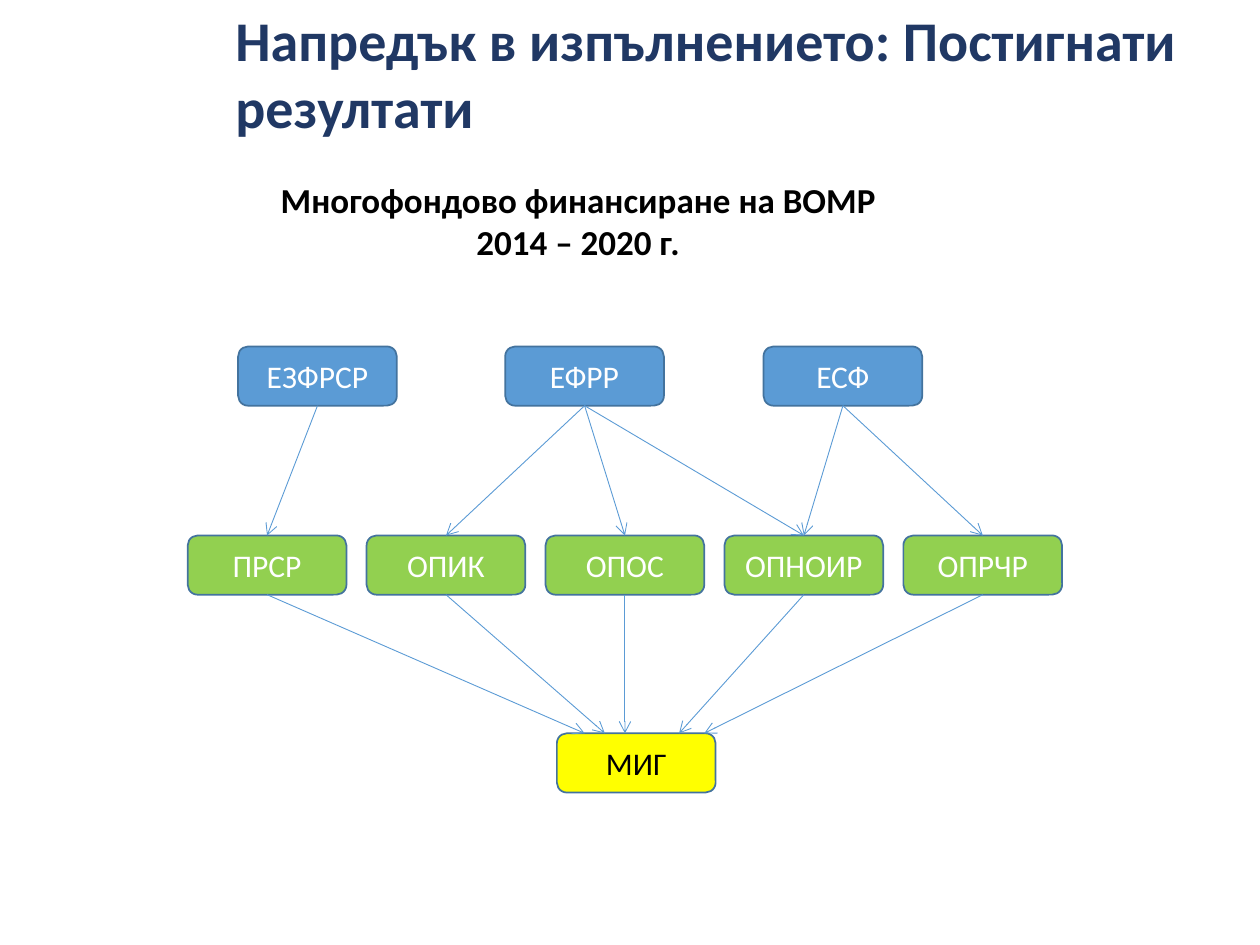
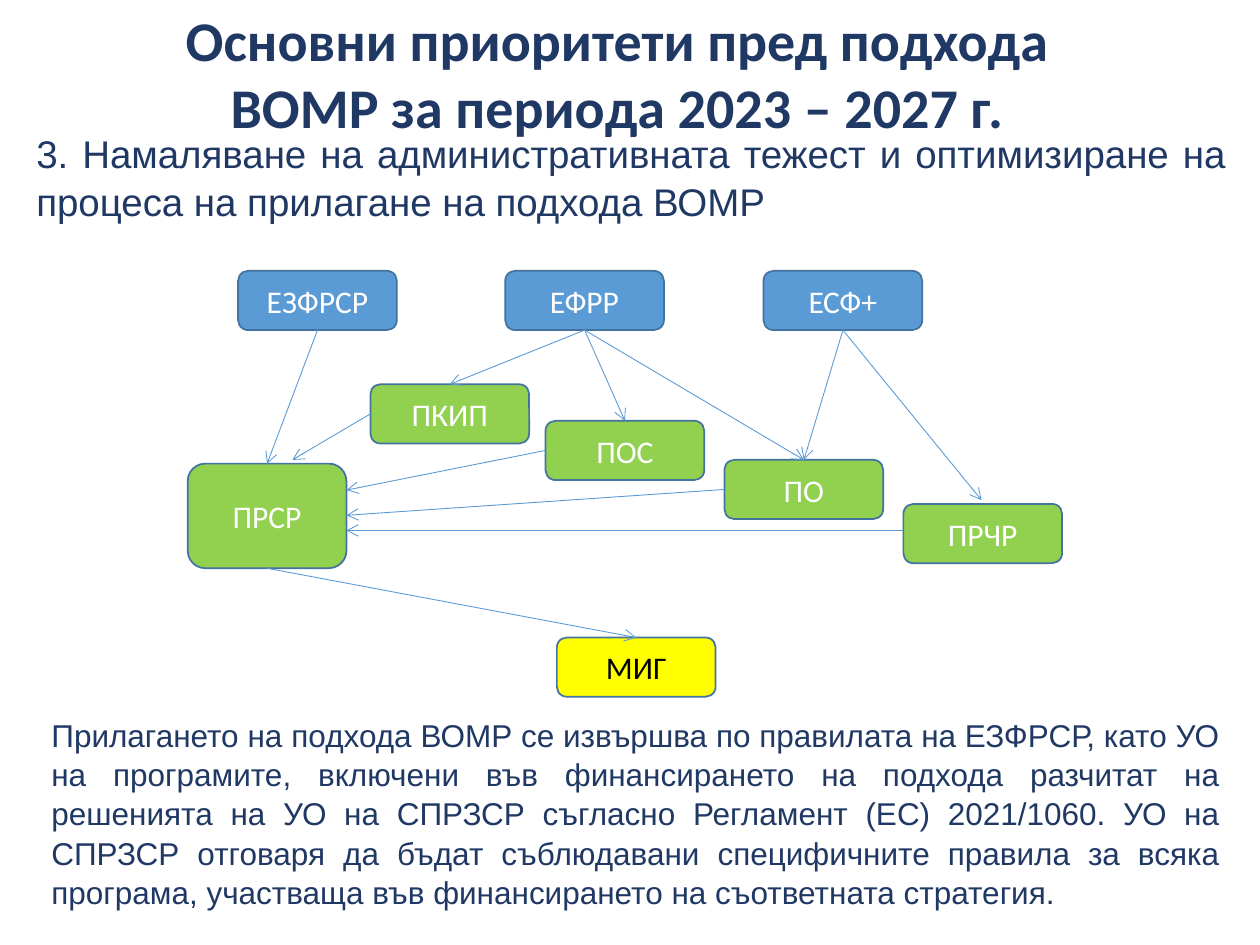
from dataclasses import dataclass

from lxml.etree import SubElement
from pptx import Presentation
from pptx.dml.color import RGBColor
from pptx.enum.shapes import MSO_CONNECTOR as Connector, MSO_SHAPE as Preset
from pptx.enum.text import MSO_ANCHOR as Anchor, PP_ALIGN as Align
from pptx.oxml.ns import qn
from pptx.util import Inches, Pt

NAVY, BLUE, GREEN, YELLOW = "203864", "5B9BD5", "92D050", "FFFF00"
OUTLINE, WHITE, BLACK = "43739E", "FFFFFF", "000000"
TOP, LEFT, BOTTOM = 0, 1, 2
BOX_WIDTH, BOX_HEIGHT = 1.26, 0.47
FUND_LEFTS = (1.89, 4.01, 6.06)
PROGRAMME_LEFT, PROGRAMME_STEP = 1.49, 1.42
GROUP_LEFT = 4.42

Point = tuple[float, float]


@dataclass(frozen=True)
class Box:
    label: str
    left: float
    top: float
    fill: str
    color: str = WHITE
    height: float = BOX_HEIGHT


@dataclass(frozen=True)
class Arrow:
    start: str | Point
    end: str | Point
    start_side: int = BOTTOM
    end_side: int = TOP


def rgb(value: str) -> RGBColor:
    return RGBColor.from_string(value)


def write(frame, text: str, *, size: float = 18, font: str = "Calibri", color: str = NAVY,
          bold: bool = False, align=Align.CENTER, anchor=Anchor.TOP,
          line_spacing: float = 1.0) -> None:
    frame.word_wrap = True
    frame.vertical_anchor = anchor
    paragraph = frame.paragraphs[0]
    paragraph.alignment = align
    paragraph.line_spacing = line_spacing
    run = paragraph.add_run()
    run.text = text
    run.font.size = Pt(size)
    run.font.name = font
    run.font.bold = bold
    run.font.color.rgb = rgb(color)


def add_text(slide, text: str, left: float, top: float, width: float, height: float,
             **style) -> None:
    area = slide.shapes.add_textbox(Inches(left), Inches(top), Inches(width), Inches(height))
    write(area.text_frame, text, **style)


def add_title(slide, text: str, left: float, width: float, align) -> None:
    add_text(slide, text, left, 0, width, 1.15, size=32, bold=True, align=align,
             anchor=Anchor.MIDDLE)


def add_statement(slide, text: str, left: float, top: float, width: float, height: float,
                  size: float) -> None:
    add_text(slide, text, left, top, width, height, size=size, font="Arial",
             align=Align.JUSTIFY, line_spacing=1.04)


def draw_box(slide, box: Box):
    node = slide.shapes.add_shape(Preset.ROUNDED_RECTANGLE, Inches(box.left), Inches(box.top),
                                  Inches(BOX_WIDTH), Inches(box.height))
    node.shadow.inherit = False
    node.fill.solid()
    node.fill.fore_color.rgb = rgb(box.fill)
    node.line.color.rgb = rgb(OUTLINE)
    node.line.width = Pt(1)
    write(node.text_frame, box.label, color=box.color, anchor=Anchor.MIDDLE)
    return node


def draw_arrow(slide, arrow: Arrow, nodes: dict) -> None:
    ends = [(0, 0) if isinstance(end, str) else end for end in (arrow.start, arrow.end)]
    link = slide.shapes.add_connector(Connector.STRAIGHT,
                                      *(Inches(value) for end in ends for value in end))
    if isinstance(arrow.start, str):
        link.begin_connect(nodes[arrow.start], arrow.start_side)
    if isinstance(arrow.end, str):
        link.end_connect(nodes[arrow.end], arrow.end_side)
    link.line.color.rgb = rgb(BLUE)
    link.line.width = Pt(0.5)
    SubElement(link.line._get_or_add_ln(), qn("a:tailEnd"), type="arrow")
    SubElement(link._element.spPr, qn("a:effectLst"))


def draw_diagram(slide, boxes: list[Box], arrows: list[Arrow]) -> None:
    nodes = {box.label: draw_box(slide, box) for box in boxes}
    for arrow in arrows:
        draw_arrow(slide, arrow, nodes)


def fund_row(labels: tuple[str, ...], top: float) -> list[Box]:
    return [Box(label, left, top, BLUE) for label, left in zip(labels, FUND_LEFTS)]


def programme_left(column: int) -> float:
    return PROGRAMME_LEFT + column * PROGRAMME_STEP


def build_results(slide) -> None:
    add_title(slide, "Напредък в изпълнението: Постигнати резултати", 1.77, 7.87, Align.LEFT)
    add_text(slide, "Многофондово финансиране на ВОМР 2014 – 2020 г.", 2.09, 1.37, 5, 0.77,
             size=20, color=BLACK, bold=True)
    programmes = ("ПРСР", "ОПИК", "ОПОС", "ОПНОИР", "ОПРЧР")
    group_top = 5.82
    boxes = fund_row(("ЕЗФРСР", "ЕФРР", "ЕСФ"), 2.75)
    boxes += [Box(label, programme_left(column), 4.25, GREEN)
              for column, label in enumerate(programmes)]
    boxes.append(Box("МИГ", GROUP_LEFT, group_top, YELLOW, BLACK))
    funding = {"ЕЗФРСР": ("ПРСР",), "ЕФРР": ("ОПИК", "ОПОС", "ОПНОИР"),
               "ЕСФ": ("ОПНОИР", "ОПРЧР")}
    arrows = [Arrow(fund, target) for fund, targets in funding.items() for target in targets]
    arrows += [Arrow(programme, (arrival, group_top))
               for programme, arrival in zip(programmes, (4.64, 4.8, 4.96, 5.39, 5.59))]
    draw_diagram(slide, boxes, arrows)


def build_priorities(slide) -> None:
    add_title(slide, "Основни приоритети пред подхода ВОМР за периода 2023 – 2027 г.",
              0.86, 8.08, Align.CENTER)
    add_statement(slide, "3. Намаляване на административната тежест и оптимизиране на процеса "
                  "на прилагане на подхода ВОМР", 0.19, 0.97, 9.64, 0.87, 22)
    boxes = fund_row(("ЕЗФРСР", "ЕФРР", "ЕСФ+"), 2.15) + [
        Box("ПРСР", programme_left(0), 3.68, GREEN, height=0.83),
        Box("ПКИП", 2.94, 3.05, GREEN),
        Box("ПОС", programme_left(2), 3.34, GREEN),
        Box("ПО", programme_left(3), 3.65, GREEN),
        Box("ПРЧР", programme_left(4), 4, GREEN),
        Box("МИГ", GROUP_LEFT, 5.06, YELLOW, BLACK),
    ]
    lead_right = PROGRAMME_LEFT + BOX_WIDTH
    arrows = [
        Arrow("ЕЗФРСР", "ПРСР"),
        Arrow("ЕФРР", "ПКИП"),
        Arrow("ЕФРР", "ПОС"),
        Arrow("ЕФРР", "ПО"),
        Arrow("ЕСФ+", "ПО"),
        Arrow("ЕСФ+", (7.79, 3.97)),
        Arrow("ПКИП", (2.32, 3.65), LEFT),
        Arrow("ПОС", (lead_right, 3.89), LEFT),
        Arrow("ПО", (lead_right, 4.09), LEFT),
        Arrow((programme_left(4), 4.21), (lead_right, 4.21)),
        Arrow("ПРСР", "МИГ"),
    ]
    draw_diagram(slide, boxes, arrows)
    add_statement(slide, "Прилагането на подхода ВОМР се извършва по правилата на ЕЗФРСР, като УО "
                  "на програмите, включени във финансирането на подхода разчитат на решенията на "
                  "УО на СПРЗСР съгласно Регламент (ЕС) 2021/1060. УО на СПРЗСР отговаря да бъдат "
                  "съблюдавани специфичните правила за всяка програма, участваща във "
                  "финансирането на съответната стратегия.", 0.31, 5.62, 9.47, 1.62, 18)


def main() -> None:
    deck = Presentation()
    deck.slide_width, deck.slide_height = Inches(10), Inches(7.5)
    for build in (build_results, build_priorities):
        build(deck.slides.add_slide(deck.slide_layouts[6]))
    deck.save("out.pptx")


if __name__ == "__main__":
    main()
